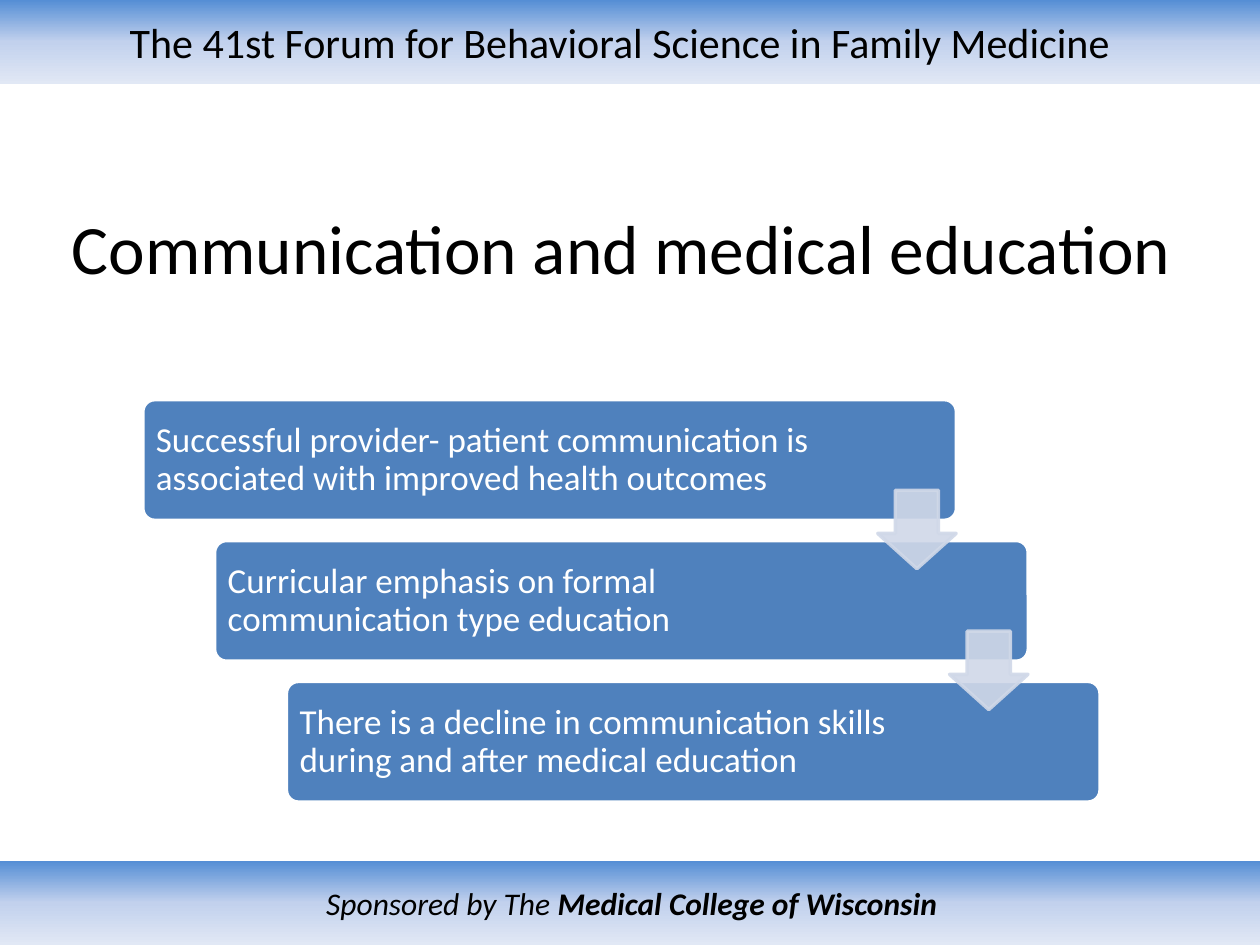
from copy import deepcopy

from pptx import Presentation
from pptx.dml.color import RGBColor
from pptx.enum.shapes import MSO_SHAPE as Shape
from pptx.enum.text import MSO_ANCHOR as Anchor, PP_ALIGN as Align
from pptx.oxml.ns import qn
from pptx.util import Pt


def color(hex_string):
    return RGBColor.from_string(hex_string)


def add_run(paragraph, text, size, hex_string, bold=False, italic=False):
    run = paragraph.add_run()
    run.text = text
    font = run.font
    font.name, font.size = "Calibri", Pt(size)
    font.bold, font.italic = bold, italic
    font.color.rgb = color(hex_string)


presentation = Presentation()
presentation.slide_width, presentation.slide_height = Pt(720), Pt(540)
slide = presentation.slides.add_slide(presentation.slide_layouts[5])

# Header and footer bands: top, width, right margin, size, italic, runs (text, bold)
bands = [
    (0, 720, 18.6, 24, False,
     [("The 41st Forum for Behavioral Science in Family Medicine", False)]),
    (492, 722, 7.2, 18, True,
     [("Sponsored by The ", False), ("Medical College of Wisconsin", True)]),
]
for top, width, right_margin, size, italic, runs in bands:
    band = slide.shapes.add_shape(Shape.RECTANGLE, 0, Pt(top), Pt(width), Pt(48))
    band.shadow.inherit = False
    band.line.fill.background()
    band.fill.gradient()
    band.fill.gradient_angle = 270
    stop_list = band.fill._xPr.find(".//" + qn("a:gsLst"))
    stop_list.insert(1, deepcopy(stop_list[0]))
    stops = [(0, "558ED5"), (0.5, "C2D1ED"), (1, "E1E8F5")]
    for stop, (position, hex_string) in zip(band.fill.gradient_stops, stops):
        stop.position = position
        stop.color.rgb = color(hex_string)
    frame = band.text_frame
    frame.word_wrap = True
    frame.vertical_anchor = Anchor.MIDDLE
    frame.margin_right = Pt(right_margin)
    paragraph = frame.paragraphs[0]
    paragraph.alignment = Align.CENTER
    for text, bold in runs:
        add_run(paragraph, text, size, "000000", bold, italic)

# Title
title = slide.shapes.title
title.left, title.top, title.width, title.height = Pt(31), Pt(113.8), Pt(648), Pt(54)
title.text_frame.vertical_anchor = Anchor.MIDDLE
paragraph = title.text_frame.paragraphs[0]
paragraph.alignment = Align.CENTER
add_run(paragraph, "Communication and medical education", 39.6, "000000")

# Staircase of steps: text and text width
step_x, step_y = 41.04, 80.5
steps = [
    ("Successful provider- patient communication is associated with improved "
     "health outcomes", 391),
    ("Curricular emphasis on formal communication type education", 375),
    ("There is a decline in communication skills during and after medical education", 375),
]
for index, (text, text_width) in enumerate(steps):
    left, top = 81.6 + index * step_x, 228.4 + index * step_y
    card = slide.shapes.add_shape(
        Shape.ROUNDED_RECTANGLE, Pt(left), Pt(top), Pt(465), Pt(69))
    card.adjustments[0] = 0.1
    card.shadow.inherit = False
    card.fill.solid()
    card.fill.fore_color.rgb = color("4F81BD")
    card.line.color.rgb = color("FFFFFF")
    card.line.width = Pt(2)

    box = slide.shapes.add_textbox(Pt(left + 1.5), Pt(top + 2), Pt(text_width), Pt(65))
    frame = box.text_frame
    frame.word_wrap = True
    frame.vertical_anchor = Anchor.MIDDLE
    frame.margin_left = frame.margin_right = Pt(6)
    frame.margin_top = frame.margin_bottom = Pt(6)
    paragraph = frame.paragraphs[0]
    paragraph.line_spacing = 0.9
    add_run(paragraph, text, 20, "FFFFFF")

# Translucent arrows from each step to the next
for index in range(len(steps) - 1):
    arrow = slide.shapes.add_shape(
        Shape.DOWN_ARROW, Pt(501.6 + index * step_x), Pt(280.2 + index * step_y),
        Pt(44.8), Pt(44.8))
    arrow.adjustments[0], arrow.adjustments[1] = 0.55, 0.45
    arrow.shadow.inherit = False
    arrow.fill.solid()
    arrow.fill.fore_color.rgb = color("D0D8E8")
    arrow.line.color.rgb = color("D0D8E8")
    arrow.line.width = Pt(2)
    for element in arrow._element.spPr.iter(qn("a:srgbClr")):
        element.makeelement(qn("a:alpha"))
        alpha = element.makeelement(qn("a:alpha"), {"val": "90000"})
        element.append(alpha)

presentation.save("out.pptx")
